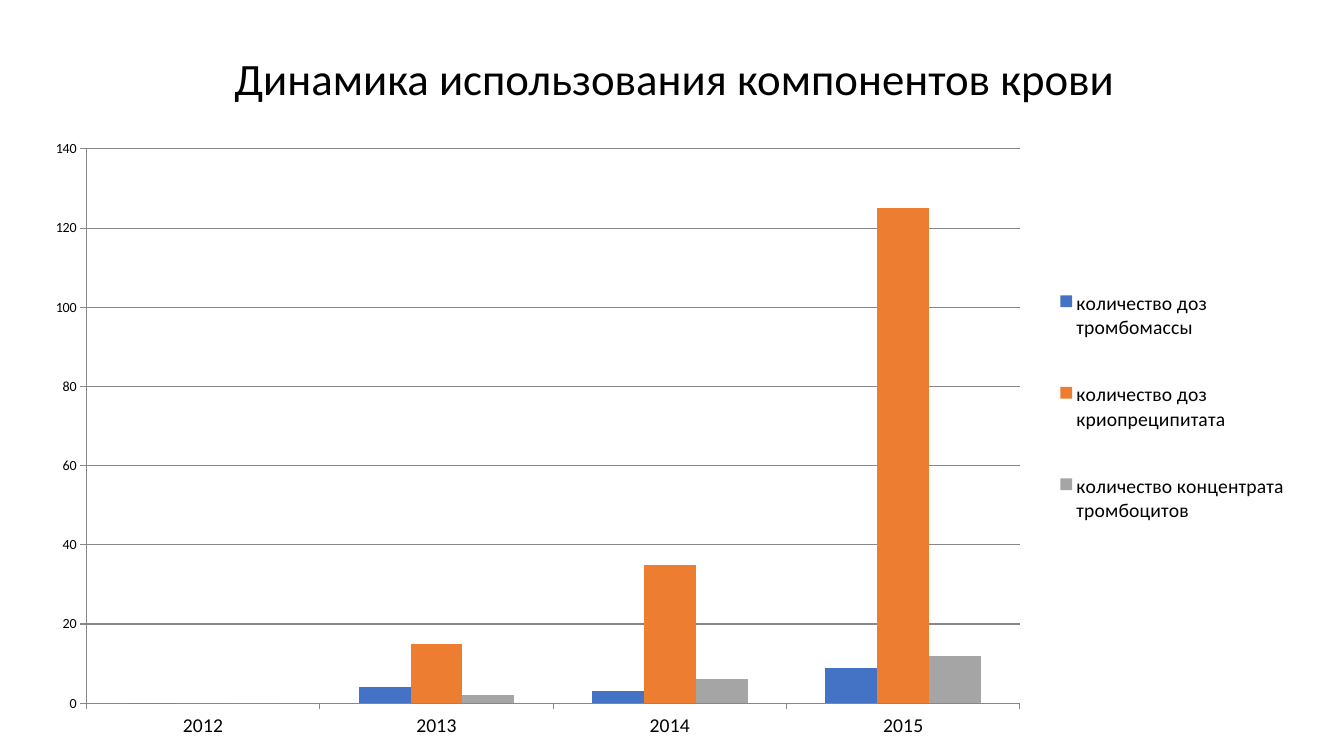
"""Build a slide with a clustered column chart of blood component use."""
from dataclasses import dataclass

from lxml.etree import SubElement as Sub
from pptx import Presentation
from pptx.chart.data import CategoryChartData as Data
from pptx.dml.color import RGBColor as Color
from pptx.enum.chart import XL_CHART_TYPE as Kind
from pptx.enum.chart import XL_LEGEND_POSITION as Side
from pptx.enum.chart import XL_TICK_MARK as Tick
from pptx.enum.text import MSO_ANCHOR as Anchor
from pptx.enum.text import PP_ALIGN as Align
from pptx.oxml.ns import qn
from pptx.util import Pt


@dataclass(frozen=True)
class Theme:
    face: str = "Calibri"
    ink: str = "000000"
    page: str = "FFFFFF"
    rule: str = "878787"
    bars: tuple = ("4472C4", "ED7D31", "A5A5A5")
    head: int = 32
    label: int = 14
    small: int = 10


class Deck:
    def __init__(self, theme, wide, high):
        self.theme = theme
        self.show = Presentation()
        self.show.slide_width, self.show.slide_height = Pt(wide), Pt(high)
        self.slide = self.show.slides.add_slide(self.show.slide_layouts[5])
        self.paint(self.slide.background.fill, theme.page)

    def paint(self, fill, tone):
        fill.solid()
        fill.fore_color.rgb = Color.from_string(tone)

    def style(self, font, size):
        font.name = self.theme.face
        font.size = Pt(size)
        font.bold = False
        font.color.rgb = Color.from_string(self.theme.ink)

    def rule(self, line):
        line.width = Pt(0.75)
        line.color.rgb = Color.from_string(self.theme.rule)

    def title(self, text, box):
        shape = self.slide.shapes.title
        shape.left, shape.top, shape.width, shape.height = map(Pt, box)
        frame = shape.text_frame
        frame.word_wrap = True
        frame.vertical_anchor = Anchor.MIDDLE
        para = frame.paragraphs[0]
        para.alignment = Align.CENTER
        para.line_spacing = 0.9
        run = para.add_run()
        run.text = text
        self.style(run.font, self.theme.head)

    def chart(self, cats, rows, box, plot, key):
        data = Data()
        data.categories = cats
        for name, vals in rows.items():
            data.add_series(name, vals)
        frame = self.slide.shapes.add_chart(Kind.COLUMN_CLUSTERED, *map(Pt, box), data)
        chart = frame.chart
        chart.has_title = False
        self.style(chart.font, self.theme.small)
        bars = chart.plots[0]
        bars.gap_width, bars.overlap = 150, 0
        bars.vary_by_categories = False
        for row, tone in zip(bars.series, self.theme.bars):
            self.paint(row.format.fill, tone)
        self.axes(chart)
        chart.has_legend = True
        chart.legend.position = Side.RIGHT
        chart.legend.include_in_layout = False
        self.style(chart.legend.font, self.theme.label)
        self.place(chart, "plotArea", 0, plot, layoutTarget="inner")
        self.place(chart, "legend", 1, key)

    def axes(self, chart):
        years, doses = chart.category_axis, chart.value_axis
        for axis, size in ((years, self.theme.label), (doses, self.theme.small)):
            axis.major_tick_mark = Tick.OUTSIDE
            axis.minor_tick_mark = Tick.NONE
            self.style(axis.tick_labels.font, size)
            self.rule(axis.format.line)
        doses.minimum_scale, doses.maximum_scale, doses.major_unit = 0, 140, 20
        doses.has_major_gridlines = True
        self.rule(doses.major_gridlines.format.line)

    def place(self, chart, part, spot, box, **modes):
        area = chart.element.find(".//" + qn("c:" + part))
        for old in area.findall(qn("c:layout")):
            area.remove(old)
        lay = Sub(area, qn("c:layout"))
        area.insert(spot, lay)
        man = Sub(lay, qn("c:manualLayout"))
        modes.update(xMode="edge", yMode="edge", **dict(zip("xywh", box)))
        for key, val in modes.items():
            Sub(man, qn("c:" + key)).set("val", str(val))


def main():
    deck = Deck(Theme(), 960, 540)
    deck.title("Динамика использования компонентов крови", (68, 25.5, 828, 65))
    rows = {
        "количество доз тромбомассы": (0, 4, 3, 9),
        "количество доз криопреципитата": (0, 15, 35, 125),
        "количество концентрата тромбоцитов": (0, 2, 6, 12),
    }
    years = ("2012", "2013", "2014", "2015")
    plot, key = (0.03, 0.014, 0.748, 0.925), (0.8, 0.18, 0.2, 0.53)
    deck.chart(years, rows, (35, 100.5, 891.5, 428), plot, key)
    deck.show.save("out.pptx")


if __name__ == "__main__":
    main()
